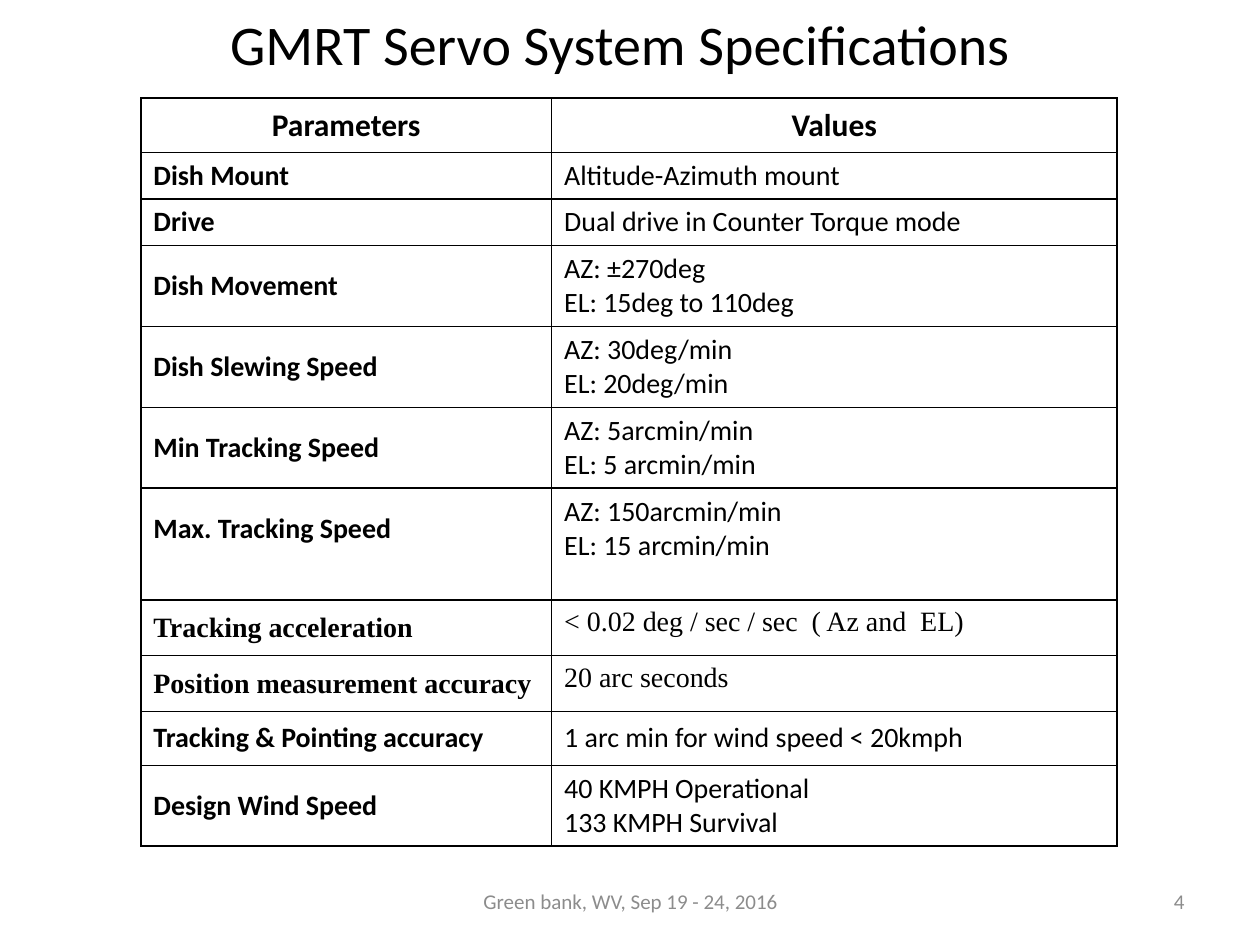
from lxml.etree import SubElement
from pptx import Presentation
from pptx.dml.color import RGBColor
from pptx.enum.text import MSO_ANCHOR, PP_ALIGN
from pptx.oxml.ns import qn
from pptx.util import Cm, Pt

COLORS = {"text": "000000", "footer": "8C8C8C", "border": "000000"}
SANS, SERIF = "Calibri", "Times New Roman"

# Row heights in cm
HEADER, SINGLE, SERIF_ROW, DOUBLE, TALL = 1.09, 0.94, 1.12, 1.63, 2.26

# Parameter, value lines, row height, font
SPECIFICATIONS = [
    ("Dish Mount", ["Altitude-Azimuth mount"], SINGLE, SANS),
    ("Drive", ["Dual drive in Counter Torque mode"], SINGLE, SANS),
    ("Dish Movement", ["AZ: ±270deg", "EL: 15deg to 110deg"], DOUBLE, SANS),
    ("Dish Slewing Speed", ["AZ: 30deg/min", "EL: 20deg/min"], DOUBLE, SANS),
    ("Min Tracking Speed", ["AZ: 5arcmin/min", "EL: 5 arcmin/min"], DOUBLE, SANS),
    ("Max. Tracking Speed", ["AZ: 150arcmin/min", "EL: 15 arcmin/min"], TALL, SANS),
    ("Tracking acceleration", ["< 0.02 deg / sec / sec  ( Az and  EL)"], SERIF_ROW, SERIF),
    ("Position measurement accuracy", ["20 arc seconds"], SERIF_ROW, SERIF),
    ("Tracking & Pointing accuracy", ["1 arc min for wind speed < 20kmph"], HEADER, SANS),
    ("Design Wind Speed", ["40 KMPH Operational", "133 KMPH Survival"], DOUBLE, SANS),
]


def write_lines(frame, lines, align=PP_ALIGN.LEFT, color="text", **font_values):
    """Write one paragraph per line, all in the same format."""
    for index, line in enumerate(lines):
        para = frame.add_paragraph() if index else frame.paragraphs[0]
        para.alignment = align
        span = para.add_run()
        span.text = line
        for name, value in font_values.items():
            setattr(span.font, name, value)
        span.font.color.rgb = RGBColor.from_string(COLORS[color])


def add_text(page, text, left, top, width, height, **format_values):
    box = page.shapes.add_textbox(Cm(left), Cm(top), Cm(width), Cm(height))
    box.text_frame.word_wrap = True
    box.text_frame.vertical_anchor = MSO_ANCHOR.MIDDLE
    write_lines(box.text_frame, [text], name=SANS, **format_values)


def set_borders(cell):
    properties = cell._tc.get_or_add_tcPr()
    for position, side in enumerate(("a:lnL", "a:lnR", "a:lnT", "a:lnB")):
        line = properties.makeelement(qn(side), {"w": str(Pt(1))})
        fill = SubElement(line, qn("a:solidFill"))
        SubElement(fill, qn("a:srgbClr"), val=COLORS["border"])
        properties.insert(position, line)


def fill_cell(cell, lines, anchor=MSO_ANCHOR.MIDDLE, **format_values):
    cell.fill.background()
    cell.vertical_anchor = anchor
    set_borders(cell)
    write_lines(cell.text_frame, lines, **format_values)


def add_specification_table(page):
    heights = [HEADER] + [row[2] for row in SPECIFICATIONS]
    widths = [8.28, 11.4]
    table = page.shapes.add_table(
        len(heights), len(widths), Cm(2.84), Cm(1.98), Cm(sum(widths)), Cm(sum(heights))
    ).table
    table.first_row = table.horz_banding = False
    for column, width in zip(table.columns, widths):
        column.width = Cm(width)
    for row, height in zip(table.rows, heights):
        row.height = Cm(height)

    # Header row
    for column, heading in enumerate(("Parameters", "Values")):
        fill_cell(table.cell(0, column), [heading], align=PP_ALIGN.CENTER,
                  name=SANS, size=Pt(18), bold=True)

    # Specification rows
    for row, (parameter, values, height, font) in enumerate(SPECIFICATIONS, start=1):
        label, value = table.cell(row, 0), table.cell(row, 1)
        fill_cell(label, [parameter], name=font, size=Pt(16), bold=True)
        if height == TALL:
            label.margin_bottom = Cm(0.76)  # keeps the label level with its values
        anchor = MSO_ANCHOR.MIDDLE if height == HEADER else MSO_ANCHOR.TOP
        fill_cell(value, values, anchor, name=font, size=Pt(16), bold=False)


def main():
    deck = Presentation()
    deck.slide_width, deck.slide_height = Cm(25.4), Cm(19.05)
    page = deck.slides.add_slide(deck.slide_layouts[6])

    # Footer and page number
    footer = {"size": Pt(12), "color": "footer"}
    add_text(page, "Green bank, WV, Sep 19 - 24, 2016", 8.69, 17.65, 8.05, 1.02,
             align=PP_ALIGN.CENTER, **footer)
    add_text(page, "4", 18.21, 17.65, 5.92, 1.02, align=PP_ALIGN.RIGHT, **footer)

    # Title and table
    add_text(page, "GMRT Servo System Specifications", 1.07, 0.03, 22.86, 1.68,
             align=PP_ALIGN.CENTER, size=Pt(32))
    add_specification_table(page)
    deck.save("out.pptx")


if __name__ == "__main__":
    main()
